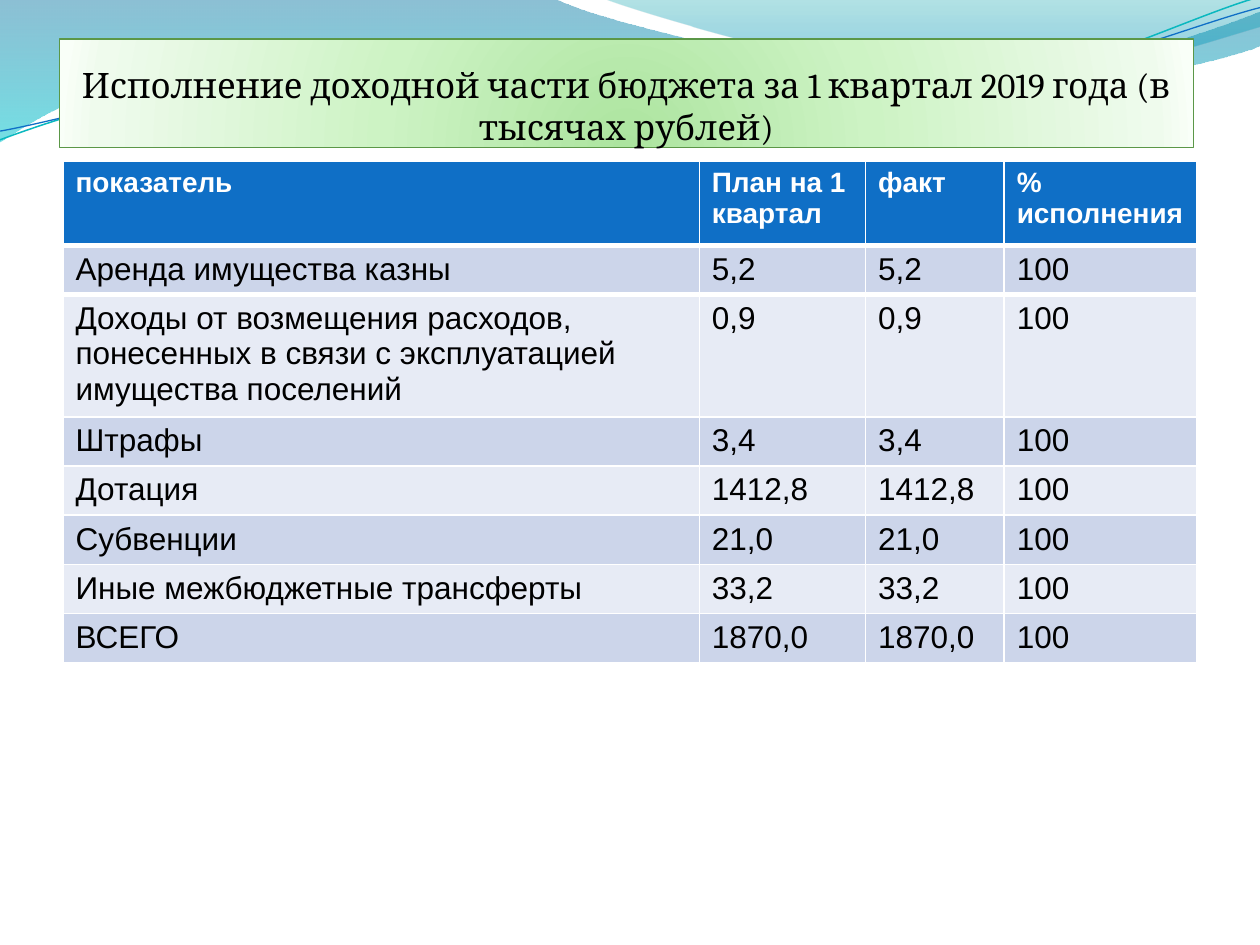
from math import cos, radians, sin

from lxml import etree
from pptx import Presentation
from pptx.dml.color import RGBColor
from pptx.enum.text import MSO_ANCHOR, PP_ALIGN
from pptx.oxml import parse_xml
from pptx.oxml.ns import nsdecls, qn
from pptx.util import Inches, Pt

BOTTOM = MSO_ANCHOR.BOTTOM
CENTER = PP_ALIGN.CENTER
rgb = RGBColor.from_string


def trace(shapes, start, parts, close):
    """Draw an outline; a part holds a line's end or a curve's three points."""
    dots = [start] + [part[i:i + 2] for part in parts
                      for i in range(0, len(part), 2)]
    dots = [(Inches(x), Inches(y)) for x, y in dots]
    pen = shapes.build_freeform(*dots[0])
    pen.add_line_segments(dots[1:], close=close)
    shape = pen.convert_to_shape()
    shape.shadow.inherit = False
    lines = iter(list(shape._element.iter(qn("a:lnTo"))))
    for part in parts:
        first = next(lines)
        if len(part) == 6:
            first.tag = qn("a:cubicBezTo")
            for line in (next(lines), next(lines)):
                first.append(line[0])
                line.getparent().remove(line)
    return shape


def blend(shape, stops, way):
    """Fill with a gradient of (place, colour, opacity) stops in percent."""
    shape.fill.gradient()
    props = shape._element.spPr
    marks = "".join(
        f'<a:gs pos="{pos * 1000}"><a:srgbClr val="{tint}">'
        f'<a:alpha val="{alpha * 1000}"/></a:srgbClr></a:gs>'
        for pos, tint, alpha in stops)
    props.replace(props.find(qn("a:gradFill")), parse_xml(
        f'<a:gradFill {nsdecls("a")} rotWithShape="1">'
        f"<a:gsLst>{marks}</a:gsLst>{way}</a:gradFill>"))


prs = Presentation()
prs.slide_width, prs.slide_height = Inches(10), Inches(7.5)
slide = prs.slides.add_slide(prs.slide_layouts[5])
shapes = slide.shapes

# Waves along the top edge
waves = [
    ((0, 0),
     [(4.4, -0.01), (4.76, 0.17, 6.64, 0.63, 7.58, 0.63),
      (8.53, 0.63, 9.58, 0.26, 10, 0.09), (10.01, 0.36),
      (9.83, 0.44, 8.7, 0.76, 7.46, 0.75),
      (6.22, 0.75, 3.82, 0.28, 2.57, 0.34),
      (1.29, 0.36, 0.46, 0.83, -0.01, 1.13)],
     [(0, "0074A1", 45), (100, "00C6CF", 55)]),
    ((4.79, -0.01),
     [(5.09, 0.11, 6.82, 0.62, 7.69, 0.65),
      (8.56, 0.69, 9.61, 0.32, 10, 0.21), (10, 0)],
     [(0, "00A1A9", 30), (80, "008BBF", 45)]),
]
for start, parts, stops in waves:
    wave = trace(shapes, start, parts, True)
    blend(wave, stops, '<a:lin ang="5400000" scaled="0"/>')
    wave.line.fill.background()

# Two thin curves, laid out level and then tilted about their middle
curves = [
    ([(0, 1.11), (0.48, 0.93), (1.58, 0.57), (2.77, 0.52), (3.95, 0.47),
      (5.93, 0.89), (7.13, 0.8), (8.33, 0.71), (9.38, 0.15), (9.98, -0.02)],
     0.57, "0AB8BF", 0.85),
    ([(0, 1.04), (0.47, 0.96), (1.64, 0.61), (2.83, 0.56), (4.03, 0.51),
      (5.97, 0.84), (7.17, 0.75), (8.36, 0.67), (9.41, 0.21), (10, 0.06)],
     0.59, "0F6FC6", 0.75),
]
tilt = radians(2.7)
pair = shapes.add_group_shape()
for dots, mid, tint, width in curves:
    level = [(4.99 + (x - 4.99) * cos(tilt) - (y - mid) * sin(tilt),
              mid + (x - 4.99) * sin(tilt) + (y - mid) * cos(tilt))
             for x, y in dots]
    parts = [sum(level[i:i + 3], ()) for i in range(1, len(level), 3)]
    curve = trace(pair.shapes, level[0], parts, False)
    curve.rotation = 357.3
    curve.fill.background()
    curve.line.color.rgb = rgb(tint)
    curve.line.width = Pt(width)

# Title, moved in front of the waves
title = shapes.title
shapes._spTree.append(title._element)
title.left, title.top = Inches(0.47), Inches(0.31)
title.width, title.height = Inches(9), Inches(0.86)
blend(title, [(0, "ACE49F", 100), (43, "CDF3C4", 100),
              (93, "EFFBED", 100), (100, "F9FFF8", 100)],
      '<a:path path="circle">'
      '<a:fillToRect l="50000" t="130000" r="50000" b="-30000"/></a:path>')
title.line.color.rgb = rgb("5B9747")
title.line.width = Pt(0.75)
title.shadow.inherit = False

frame = title.text_frame
frame.text = "Исполнение доходной части бюджета за 1 квартал 2019 года (в тысячах рублей)"
frame.word_wrap = True
frame.vertical_anchor = BOTTOM
frame.margin_left = frame.margin_right = frame.margin_bottom = 0
frame.margin_top = Inches(0.05)
frame.paragraphs[0].alignment = CENTER
font = frame.paragraphs[0].runs[0].font
font.name, font.size = "Cambria", Pt(20)
font.color.rgb = rgb("000000")

# Budget table
rows = [
    ("показатель", "План на 1 квартал", "факт", "% исполнения"),
    ("Аренда имущества казны", "5,2", "5,2", "100"),
    ("Доходы от возмещения расходов, понесенных в связи с эксплуатацией "
     "имущества поселений", "0,9", "0,9", "100"),
    ("Штрафы", "3,4", "3,4", "100"),
    ("Дотация", "1412,8", "1412,8", "100"),
    ("Субвенции", "21,0", "21,0", "100"),
    ("Иные межбюджетные трансферты", "33,2", "33,2", "100"),
    ("ВСЕГО", "1870,0", "1870,0", "100"),
]
widths = [5.05, 1.32, 1.1, 1.53]
heights = [0.67, 0.39, 0.97] + [0.39] * 5
table = shapes.add_table(len(rows), len(widths), Inches(0.5), Inches(1.28),
                         Inches(sum(widths)), Inches(sum(heights))).table
for col, width in zip(table.columns, widths):
    col.width = Inches(width)
for r, row in enumerate(rows):
    table.rows[r].height = Inches(heights[r])
    head = r == 0
    back = "0F6FC6" if head else ("E7EBF5", "CCD5EA")[r % 2]
    for c, text in enumerate(row):
        cell = table.cell(r, c)
        cell.fill.solid()
        cell.fill.fore_color.rgb = rgb(back)
        cell.text_frame.text = text
        font = cell.text_frame.paragraphs[0].runs[0].font
        font.name, font.bold = "Arial", head
        font.size = Pt(16 if head else 18)
        font.color.rgb = rgb("FFFFFF" if head else "000000")
        if r < 2:
            side, weight = ("a:lnB", 3) if head else ("a:lnT", 3)
            edge = etree.Element(qn(side), w=str(Pt(weight)))
            solid = etree.SubElement(edge, qn("a:solidFill"))
            etree.SubElement(solid, qn("a:srgbClr"), val="FFFFFF")
            cell._tc.get_or_add_tcPr().insert(0, edge)

prs.save("out.pptx")
